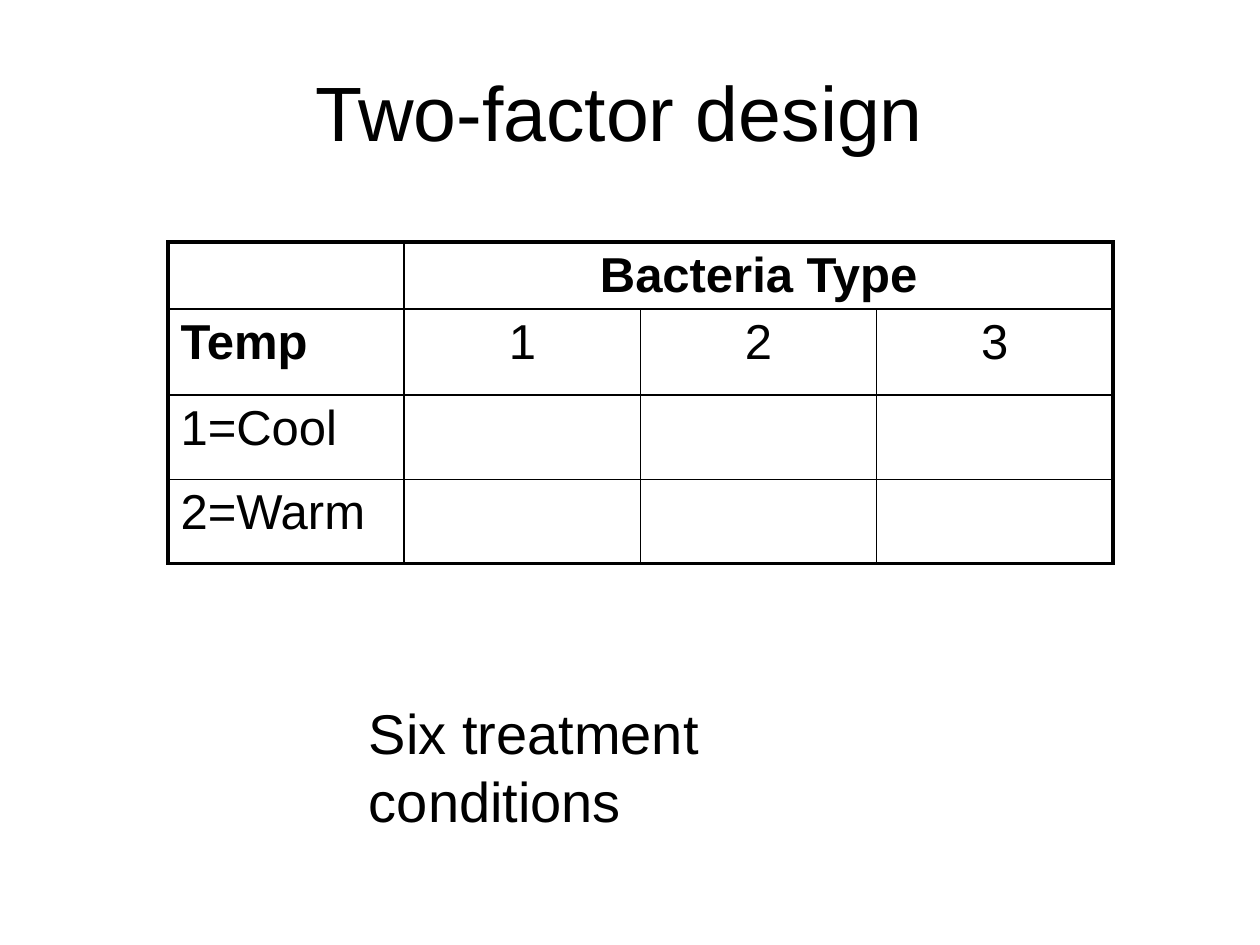
import lxml.etree
import pptx
import pptx.dml.color
import pptx.enum.text
import pptx.oxml.ns
import pptx.util

THEME = {
    "font": "Arial",
    "ink": "000000",
    "title": 44,
    "table": 28,
    "caption": 32,
    "outer": 2.25,
    "inner": 1,
}
ALIGN = pptx.enum.text.PP_ALIGN
ANCHOR = pptx.enum.text.MSO_ANCHOR


def write(frame, text, size, align=ALIGN.LEFT, bold=False):
    frame.text = text
    paragraph = frame.paragraphs[0]
    paragraph.alignment = align
    paragraph.font.name = THEME["font"]
    paragraph.font.size = pptx.util.Pt(size)
    paragraph.font.bold = bold
    paragraph.font.color.rgb = pptx.dml.color.RGBColor.from_string(THEME["ink"])


def add_border(cell, side, width, position):
    """Draw one side (L, R, T or B); lines must precede the fill in tcPr."""
    qn = pptx.oxml.ns.qn
    line = lxml.etree.Element(qn(f"a:ln{side}"), w=str(pptx.util.Pt(width)))
    fill = lxml.etree.SubElement(line, qn("a:solidFill"))
    lxml.etree.SubElement(fill, qn("a:srgbClr"), val=THEME["ink"])
    cell._tc.get_or_add_tcPr().insert(position, line)


presentation = pptx.Presentation()
presentation.slide_width = pptx.util.Inches(10)
presentation.slide_height = pptx.util.Inches(7.5)
width, height = presentation.slide_width, presentation.slide_height
slide = presentation.slides.add_slide(presentation.slide_layouts[5])

# Title
title = slide.shapes.title
title.left, title.top = width // 15, height // 30
title.width, title.height = int(width * 0.85), height // 6
title.text_frame.vertical_anchor = ANCHOR.MIDDLE
write(title.text_frame, "Two-factor design", THEME["title"], ALIGN.CENTER)

# Design grid: temperature down, bacteria type across
design = [
    ["", "Bacteria Type", "", ""],
    ["Temp", "1", "2", "3"],
    ["1=Cool", "", "", ""],
    ["2=Warm", "", "", ""],
]
headings = ("Bacteria Type", "Temp")
row_heights = [0.53, 0.68, 0.67, 0.67]
last_row, last_column = len(design) - 1, len(design[0]) - 1

grid = slide.shapes.add_table(
    len(design), len(design[0]),
    int(width * 2 / 15), pptx.util.Inches(1.92),
    int(width * 0.75), pptx.util.Inches(sum(row_heights)),
).table
grid.first_row = False
grid.horz_banding = False
grid.cell(0, 1).merge(grid.cell(0, last_column))

for r, labels in enumerate(design):
    grid.rows[r].height = pptx.util.Inches(row_heights[r])
    for c, label in enumerate(labels):
        cell = grid.cell(r, c)
        cell.fill.background()
        align = ALIGN.CENTER if c else ALIGN.LEFT
        write(cell.text_frame, label, THEME["table"], align, label in headings)
        on_edge = {"L": c == 0, "R": c == last_column, "T": r == 0, "B": r == last_row}
        if cell.is_merge_origin:
            on_edge["R"] = True
        for position, (side, outer) in enumerate(on_edge.items()):
            add_border(cell, side, THEME["outer" if outer else "inner"], position)

# Caption
caption = slide.shapes.add_textbox(
    int(width * 0.283), int(height * 0.733), int(width * 0.48), int(height * 0.084)
)
caption.text_frame.word_wrap = True
write(caption.text_frame, "Six treatment conditions", THEME["caption"])

presentation.save("out.pptx")
